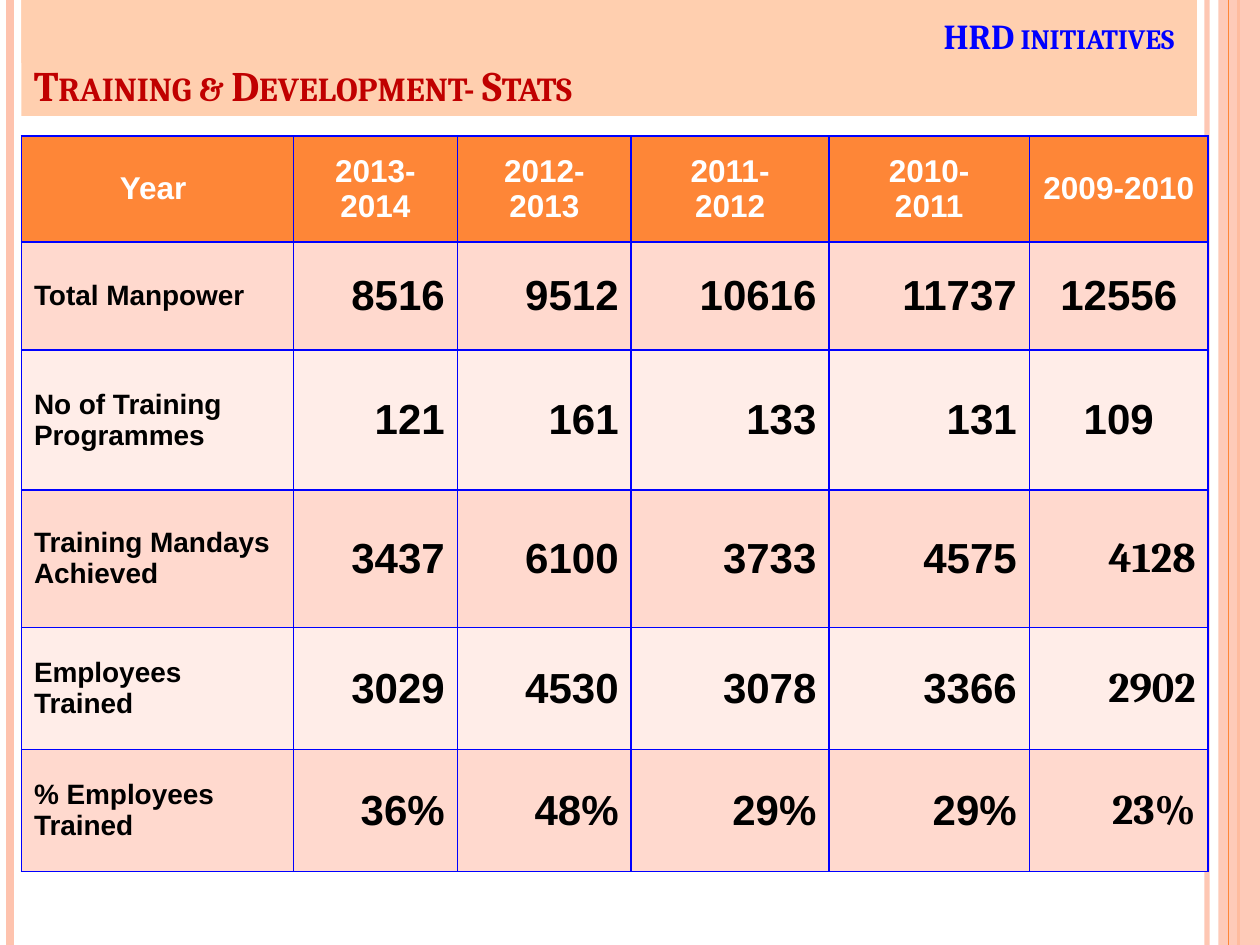
from dataclasses import dataclass

from lxml.etree import SubElement
from pptx import Presentation
from pptx.dml.color import RGBColor
from pptx.enum.shapes import MSO_CONNECTOR as Connector, MSO_SHAPE as Shape
from pptx.enum.text import MSO_ANCHOR as Anchor, PP_ALIGN as Align
from pptx.oxml.ns import qn
from pptx.util import Inches, Pt


@dataclass(frozen=True)
class Theme:
    orange: str = "FE8637"
    salmon: str = "FEC3AE"
    peach: str = "FFCFAF"
    band_dark: str = "FFD9CE"
    band_light: str = "FFEDE8"
    blue: str = "0000FF"
    red: str = "C00000"
    white: str = "FFFFFF"
    black: str = "000000"
    body_font: str = "Arial"
    heading_font: str = "Cambria"
    title_size: int = 24
    subtitle_size: int = 20
    header_size: int = 18
    label_size: int = 16
    value_size: int = 24


def set_alpha(fill_parent, percent):
    color = fill_parent.find(".//" + qn("a:srgbClr"))
    SubElement(color, qn("a:alpha"), val=str(percent * 1000))


def write_text(frame, text, *, size, font, color, align=Align.LEFT, small_caps=False):
    """Write bold text, one paragraph for each line."""
    for index, line in enumerate(text.split("\n")):
        paragraph = frame.add_paragraph() if index else frame.paragraphs[0]
        paragraph.alignment = align
        run = paragraph.add_run()
        run.text = line
        run.font.size = Pt(size)
        run.font.name = font
        run.font.bold = True
        run.font.color.rgb = RGBColor.from_string(color)
        if small_caps:
            run._r.get_or_add_rPr().set("cap", "small")


class SlideBuilder:
    def __init__(self, slide, theme):
        self.slide = slide
        self.theme = theme

    def rectangle(self, left, top, width, height, color, alpha=None):
        shape = self.slide.shapes.add_shape(
            Shape.RECTANGLE, Inches(left), Inches(top), Inches(width), Inches(height))
        shape.shadow.inherit = False
        shape.fill.solid()
        shape.fill.fore_color.rgb = RGBColor.from_string(color)
        shape.line.fill.background()
        if alpha:
            set_alpha(shape._element.spPr, alpha)
        return shape

    def vertical_line(self, x, color, width, alpha=None):
        line = self.slide.shapes.add_connector(
            Connector.STRAIGHT, Inches(x), Inches(0), Inches(x), Inches(7.5))
        line.line.color.rgb = RGBColor.from_string(color)
        line.line.width = Pt(width)
        properties = line._element.spPr
        if alpha:
            set_alpha(properties, alpha)
        SubElement(properties, qn("a:effectLst"))

    def banner(self, left, top, width, height, text, **text_format):
        shape = self.rectangle(left, top, width, height, self.theme.peach)
        frame = shape.text_frame
        frame.word_wrap = True
        frame.vertical_anchor = Anchor.BOTTOM
        write_text(frame, text, font=self.theme.heading_font, small_caps=True, **text_format)

    def cell(self, cell, text, fill, **text_format):
        properties = cell._tc.get_or_add_tcPr()
        for side in ("a:lnL", "a:lnR", "a:lnT", "a:lnB"):
            border = SubElement(properties, qn(side), w=str(Pt(1)))
            SubElement(SubElement(border, qn("a:solidFill")), qn("a:srgbClr"),
                       val=self.theme.blue)
        cell.fill.solid()
        cell.fill.fore_color.rgb = RGBColor.from_string(fill)
        cell.vertical_anchor = Anchor.MIDDLE
        write_text(cell.text_frame, text, **text_format)

    def table(self, left, top, column_widths, row_heights, rows):
        theme = self.theme
        table = self.slide.shapes.add_table(
            len(rows), len(column_widths), Inches(left), Inches(top),
            Inches(sum(column_widths)), Inches(sum(row_heights))).table
        for column, width in zip(table.columns, column_widths):
            column.width = Inches(width)
        for row, height in zip(table.rows, row_heights):
            row.height = Inches(height)

        last_column = len(column_widths) - 1
        for r, row in enumerate(rows):
            band = theme.band_dark if r % 2 else theme.band_light
            for c, text in enumerate(row):
                fill, color, font = band, theme.black, theme.body_font
                size, align = theme.value_size, Align.RIGHT
                if r == 0:
                    fill, color = theme.orange, theme.white
                    size, align = theme.header_size, Align.CENTER
                elif c == 0:
                    size, align = theme.label_size, Align.LEFT
                elif c == last_column and r <= 2:
                    align = Align.CENTER
                elif c == last_column:
                    font = theme.heading_font
                self.cell(table.cell(r, c), text, fill,
                          size=size, font=font, color=color, align=align)


COLUMN_WIDTHS = [2.16, 1.3, 1.38, 1.57, 1.59, 1.42]
ROW_HEIGHTS = [0.84, 0.86, 1.11, 1.09, 0.97, 0.97]
TRAINING_STATS = [
    ["Year ", "2013-2014", "2012-2013", "2011-\n2012", "2010-\n2011", "2009-2010"],
    ["Total Manpower", "8516", "9512", "10616", "11737", "12556"],
    ["No of Training Programmes", "121", "161", "133", "131", "109"],
    ["Training Mandays Achieved", "3437", "6100", "3733", "4575", "4128"],
    ["Employees Trained", "3029", "4530", "3078", "3366", "2902"],
    ["% Employees Trained", "36%", "48%", "29%", "29%", "23%"],
]


def main():
    presentation = Presentation()
    presentation.slide_width = Inches(10)
    presentation.slide_height = Inches(7.5)
    theme = Theme()
    builder = SlideBuilder(
        presentation.slides.add_slide(presentation.slide_layouts[6]), theme)

    # Side stripes
    builder.vertical_line(9.58, theme.salmon, 3, alpha=93)
    builder.vertical_line(0.08, theme.salmon, 4.5)
    builder.vertical_line(9.83, theme.orange, 1.5)
    builder.rectangle(9.67, 0, 0.33, 7.5, theme.salmon, alpha=87)
    builder.vertical_line(9.75, theme.orange, 0.75)

    # Title
    builder.banner(0.17, 0, 9.33, 0.92, "Training & Development- Stats",
                   size=theme.title_size, color=theme.red)

    # Training figures by year
    builder.table(0.17, 1.08, COLUMN_WIDTHS, ROW_HEIGHTS, TRAINING_STATS)

    # Section heading
    builder.banner(0.17, 0, 9.25, 0.5, "HRD initiatives",
                   size=theme.subtitle_size, color=theme.blue, align=Align.RIGHT)

    presentation.save("out.pptx")


if __name__ == "__main__":
    main()
